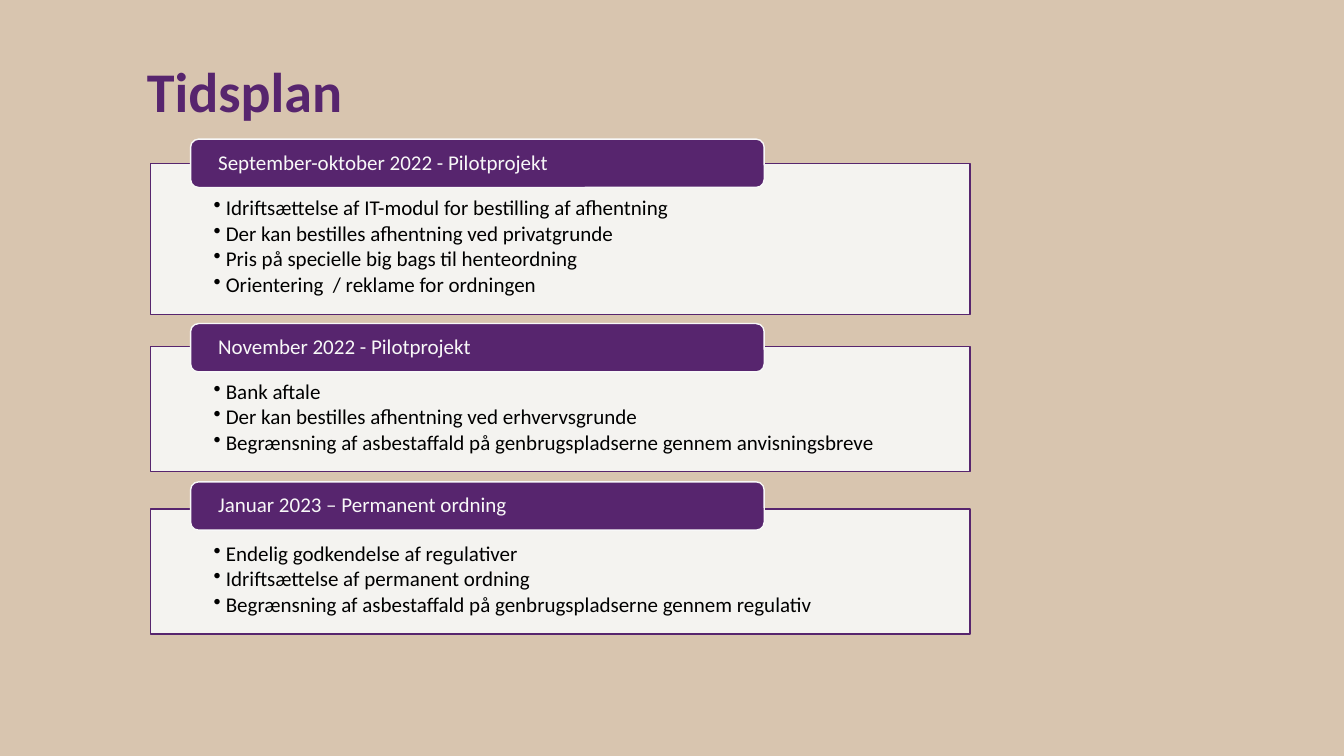
from pptx import Presentation
from pptx.dml.color import RGBColor
from pptx.enum.shapes import MSO_SHAPE
from pptx.enum.text import MSO_ANCHOR, PP_ALIGN
from pptx.oxml.ns import qn
from pptx.util import Inches, Pt
from lxml import etree

RECT, ROUNDED = MSO_SHAPE.RECTANGLE, MSO_SHAPE.ROUNDED_RECTANGLE
TOP, MIDDLE = MSO_ANCHOR.TOP, MSO_ANCHOR.MIDDLE
LEFT = PP_ALIGN.LEFT

SAND = RGBColor(0xD8, 0xC5, 0xAF)
PURPLE = RGBColor(0x57, 0x25, 0x6E)
PALE = RGBColor(0xF8, 0xF8, 0xF8)
BLACK = RGBColor(0, 0, 0)

FONT = "Calibri"
WIDTH, HEIGHT = Inches(13.33), Inches(7.5)
PANEL_X, PANEL_W = 11.18, 61
TAB_X, TAB_W, TAB_H = 14.18, 42.68, 6.4
PANEL_BASE, BULLET_ROW = 6.13, 3.47

PHASES = [
    (18.4, 21.6, "September-oktober 2022 - Pilotprojekt", [
        "Idriftsættelse af IT-modul for bestilling af afhentning",
        "Der kan bestilles afhentning ved privatgrunde",
        "Pris på specielle big bags til henteordning",
        "Orientering  / reklame for ordningen",
    ]),
    (42.8, 45.87, "November 2022 - Pilotprojekt", [
        "Bank aftale",
        "Der kan bestilles afhentning ved erhvervsgrunde",
        "Begrænsning af asbestaffald på genbrugspladserne gennem anvisningsbreve",
    ]),
    (63.73, 67.33, "Januar 2023 – Permanent ordning", [
        "Endelig godkendelse af regulativer",
        "Idriftsættelse af permanent ordning",
        "Begrænsning af asbestaffald på genbrugspladserne gennem regulativ",
    ]),
]


def area(x, y, w, h):
    """Turn percentages of the slide into a position and size."""
    return [int(size * share / 100) for size, share in
            ((WIDTH, x), (HEIGHT, y), (WIDTH, w), (HEIGHT, h))]


def set_frame(tf, insets, anchor):
    """Set wrapping, anchor and insets (left, top, right, bottom)."""
    tf.word_wrap = True
    tf.vertical_anchor = anchor
    tf.margin_left, tf.margin_top, tf.margin_right, tf.margin_bottom = map(Inches, insets)


def write(p, text, size, color, bold=False):
    """Add one left-aligned run to a paragraph."""
    p.alignment = LEFT
    p.line_spacing = 0.9
    r = p.add_run()
    r.text = text
    r.font.name, r.font.size, r.font.bold = FONT, Pt(size), bold
    r.font.color.rgb = color


def add_bullet(p):
    """Give a paragraph a hanging round bullet."""
    pPr = p._p.get_or_add_pPr()
    pPr.set("marL", str(Inches(0.12)))
    pPr.set("indent", str(-Inches(0.12)))
    etree.SubElement(pPr, qn("a:buChar")).set("char", "•")


def add_box(s, kind, place, fill, line):
    """Add a flat filled and outlined shape."""
    sp = s.shapes.add_shape(kind, *area(*place))
    sp.shadow.inherit = False
    sp.fill.solid()
    sp.fill.fore_color.rgb = fill
    sp.line.color.rgb = line
    sp.line.width = Pt(1)
    return sp


def add_title(s, text):
    """Add the slide heading."""
    tf = s.shapes.add_textbox(*area(10.2, 8, 78.84, 8.53)).text_frame
    set_frame(tf, (0.1, 0.04, 0.1, 0.05), TOP)
    write(tf.paragraphs[0], text, 40, PURPLE, True)


def add_panel(s, y, bullets):
    """Add a translucent panel sized to its bullets."""
    height = PANEL_BASE + BULLET_ROW * len(bullets)
    sp = add_box(s, RECT, (PANEL_X, y, PANEL_W, height), PALE, PURPLE)
    color = sp.fill._xPr.find(qn("a:solidFill"))[0]
    etree.SubElement(color, qn("a:alpha")).set("val", "90000")
    tf = sp.text_frame
    set_frame(tf, (0.63, 0.34, 0.63, 0.12), TOP)
    for i, text in enumerate(bullets):
        p = tf.add_paragraph() if i else tf.paragraphs[0]
        add_bullet(p)
        p.space_after = Pt(2)
        write(p, text, 15, BLACK)


def add_tab(s, y, text):
    """Add the rounded heading that overlaps a panel."""
    sp = add_box(s, ROUNDED, (TAB_X, y, TAB_W, TAB_H), PURPLE, PALE)
    set_frame(sp.text_frame, (0.25, 0, 0.25, 0), MIDDLE)
    write(sp.text_frame.paragraphs[0], text, 15, PALE)


def main():
    """Build the timetable slide."""
    prs = Presentation()
    prs.slide_width, prs.slide_height = WIDTH, HEIGHT
    s = prs.slides.add_slide(prs.slide_layouts[6])
    s.background.fill.solid()
    s.background.fill.fore_color.rgb = SAND
    add_title(s, "Tidsplan")
    for tab_y, panel_y, heading, bullets in PHASES:
        add_panel(s, panel_y, bullets)
        add_tab(s, tab_y, heading)
    prs.save("out.pptx")


if __name__ == "__main__":
    main()
